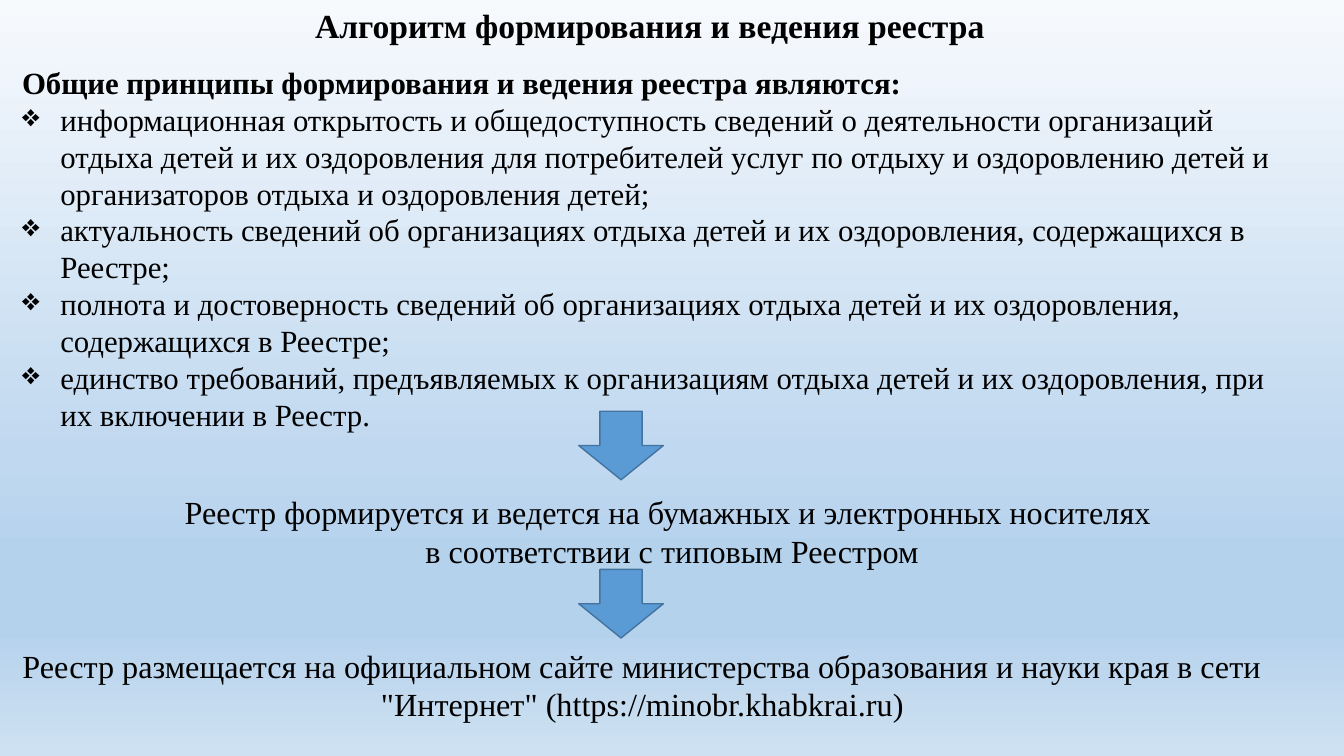
from dataclasses import dataclass

from lxml.etree import SubElement
from pptx import Presentation
from pptx.dml.color import RGBColor
from pptx.enum.shapes import MSO_SHAPE as Preset
from pptx.enum.text import MSO_AUTO_SIZE as AutoSize, PP_ALIGN as Align
from pptx.oxml.ns import qn
from pptx.slide import Slide
from pptx.util import Emu, Inches, Pt

SLIDE_WIDTH, SLIDE_HEIGHT = Inches(13.33), Inches(7.5)
FONT = "Times New Roman"
BULLET_INDENT = Inches(0.38)
# Background stops: position in percent, colour
SKY = [(0, "F7FAFD"), (60, "C0D8F0"), (74, "B5D2EC"), (83, "B5D2EC"), (100, "CEE1F2")]


@dataclass(frozen=True)
class Area:
    """Left, top, width and height in percent of the slide."""
    left: float
    top: float
    width: float
    height: float

    def lengths(self) -> list[Emu]:
        return [
            Emu(round(share / 100 * side))
            for share, side in (
                (self.left, SLIDE_WIDTH), (self.top, SLIDE_HEIGHT),
                (self.width, SLIDE_WIDTH), (self.height, SLIDE_HEIGHT),
            )
        ]


@dataclass(frozen=True)
class TextBlock:
    area: Area
    lines: tuple[str, ...]
    size: int
    heading: bool = False  # first line is bold
    bulleted: bool = False  # lines after the first carry a bullet
    align: Align = Align.CENTER
    wrap: bool = True


TEXT_BLOCKS = [
    TextBlock(Area(22.43, 0, 51.84, 6.67),
              ("Алгоритм формирования и ведения реестра",),
              size=24, heading=True, wrap=False),
    TextBlock(Area(0.9, 7.73, 94.97, 60.53), (
        "Общие принципы формирования и ведения реестра являются:",
        "информационная открытость и общедоступность сведений о деятельности организаций "
        "отдыха детей и их оздоровления для потребителей услуг по отдыху и оздоровлению "
        "детей и организаторов отдыха и оздоровления детей;",
        "актуальность сведений об организациях отдыха детей и их оздоровления, "
        "содержащихся в Реестре;",
        "полнота и достоверность сведений об организациях отдыха детей и их оздоровления, "
        "содержащихся в Реестре;",
        "единство требований, предъявляемых к организациям отдыха детей и их оздоровления, "
        "при их включении в Реестр.",
    ), size=22, heading=True, bulleted=True, align=Align.LEFT),
    TextBlock(Area(4.35, 64.53, 91.37, 11.73), (
        "Реестр формируется и ведется на бумажных и электронных носителях ",
        "в соответствии с типовым Реестром",
    ), size=23),
    TextBlock(Area(0.9, 84.8, 93.85, 11.73), (
        "Реестр размещается на официальном сайте министерства образования и науки края "
        'в сети "Интернет" (https://minobr.khabkrai.ru)',
    ), size=23),
]
ARROWS = [Area(43.06, top, 6.3, 9.07) for top in (54.4, 75.33)]


def color(value: str) -> RGBColor:
    return RGBColor.from_string(value)


def paint_background(slide: Slide) -> None:
    fill = slide.background.fill
    fill.gradient()
    fill.gradient_angle = 270
    stops = next(slide.element.iter(qn("a:gsLst")))
    for stop in list(stops):
        stops.remove(stop)
    for position, value in SKY:
        stop = SubElement(stops, qn("a:gs"), pos=str(position * 1000))
        SubElement(stop, qn("a:srgbClr"), val=value)


def write(paragraph, text: str, *, size: int, bold: bool = False,
          align: Align = Align.LEFT, bullet: str = "") -> None:
    paragraph.alignment = align
    run = paragraph.add_run()
    run.text = text
    run.font.name, run.font.size, run.font.bold = FONT, Pt(size), bold
    run.font.color.rgb = color("000000")
    if bullet:
        properties = paragraph._p.get_or_add_pPr()
        properties.set("marL", str(BULLET_INDENT))
        properties.set("indent", str(-BULLET_INDENT))
        SubElement(properties, qn("a:buChar"), char=bullet)


def add_text(slide: Slide, block: TextBlock) -> None:
    frame = slide.shapes.add_textbox(*block.area.lengths()).text_frame
    frame.word_wrap = block.wrap
    frame.auto_size = AutoSize.SHAPE_TO_FIT_TEXT
    for index, line in enumerate(block.lines):
        paragraph = frame.add_paragraph() if index else frame.paragraphs[0]
        write(paragraph, line, size=block.size, align=block.align,
              bold=block.heading and index == 0,
              bullet="❖" if block.bulleted and index else "")


def add_arrow(slide: Slide, area: Area) -> None:
    shape = slide.shapes.add_shape(Preset.DOWN_ARROW, *area.lengths())
    shape.shadow.inherit = False
    shape.fill.solid()
    shape.fill.fore_color.rgb = color("5B9BD5")
    shape.line.color.rgb = color("43739E")
    shape.line.width = Pt(1)


def main() -> None:
    presentation = Presentation()
    presentation.slide_width, presentation.slide_height = SLIDE_WIDTH, SLIDE_HEIGHT
    slide = presentation.slides.add_slide(presentation.slide_layouts[6])
    paint_background(slide)
    # Title, principles and the two steps
    for block in TEXT_BLOCKS:
        add_text(slide, block)
    # Arrows between the steps
    for area in ARROWS:
        add_arrow(slide, area)
    presentation.save("out.pptx")


if __name__ == "__main__":
    main()
